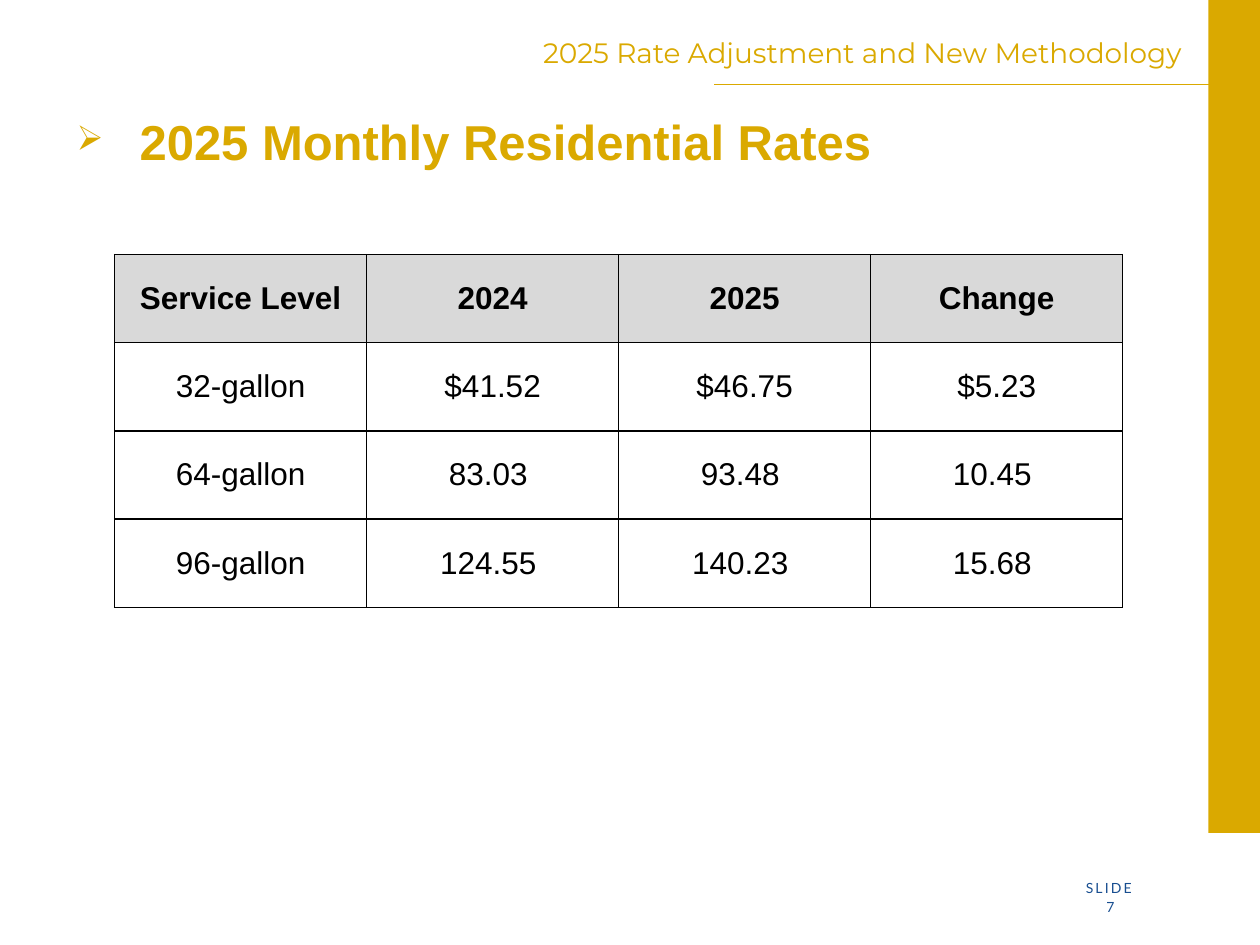
from lxml import etree
from pptx import Presentation
from pptx.dml.color import RGBColor
from pptx.enum.shapes import MSO_CONNECTOR, MSO_SHAPE
from pptx.enum.text import MSO_ANCHOR, PP_ALIGN
from pptx.oxml.ns import qn
from pptx.util import Inches, Pt

LEFT, CENTER, RIGHT = PP_ALIGN.LEFT, PP_ALIGN.CENTER, PP_ALIGN.RIGHT
MIDDLE = MSO_ANCHOR.MIDDLE
STRAIGHT = MSO_CONNECTOR.STRAIGHT
RECTANGLE = MSO_SHAPE.RECTANGLE

COLORS = {"gold": "DAA900", "blue": "184E90", "black": "000000",
          "header": "D9D9D9"}

HEADING_FORMAT = {"name": "Arial", "size": Pt(28), "bold": True}
TITLE_FORMAT = {"name": "Montserrat", "size": Pt(16)}
FOOTER_FORMAT = {"name": "Lato", "size": Pt(8)}
CELL_FORMAT = {"name": "Arial", "size": Pt(18)}

# text, (left, top, width, height), (side inset, top inset), alignment,
# line spacing, colour, format
HEADING = ("2025 Monthly Residential Rates", (0.51, 0.89, 8.8, 0.81),
           (0.1, 0.05), LEFT, 0.9, "gold", HEADING_FORMAT)
TITLE = ("2025 Rate Adjustment and New Methodology", (0.14, 0.26, 9.34, 0.63),
         (0.1, 0.05), RIGHT, 0.9, "gold", TITLE_FORMAT)
FOOTER = [
    ("SLIDE", (8.19, 6.93, 0.89, 0.24), (0.1, 0.05), RIGHT, 1.0, "blue",
     FOOTER_FORMAT),
    ("7", (8.67, 7.07, 0.68, 0.36), (0.11, 0.06), LEFT, 1.0, "blue",
     FOOTER_FORMAT),
]
RATES = [
    ("Service Level", "2024", "2025", "Change"),
    ("32-gallon", "$41.52", "$46.75", "$5.23"),
    ("64-gallon", "83.03", "93.48", "10.45"),
    ("96-gallon", "124.55", "140.23", "15.68"),
]
TABLE_LEFT, TABLE_TOP, COLUMN_WIDTH, ROW_HEIGHT = 0.91, 2.02, 2, 0.7
FIGURE_INSET = 0.07  # shifts figures without a dollar sign to the left


def rgb(color):
    return RGBColor.from_string(COLORS[color])


def set_font(font, color, values):
    for name, value in values.items():
        setattr(font, name, value)
    font.color.rgb = rgb(color)


def add_text(slide, text, box, insets, alignment, spacing, color, values):
    shape = slide.shapes.add_textbox(*map(Inches, box))
    frame = shape.text_frame
    frame.word_wrap = True
    frame.margin_left = frame.margin_right = Inches(insets[0])
    frame.margin_top = frame.margin_bottom = Inches(insets[1])
    paragraph = frame.paragraphs[0]
    paragraph.alignment = alignment
    paragraph.line_spacing = spacing
    run = paragraph.add_run()
    run.text = text
    set_font(run.font, color, values)
    return paragraph


def add_bullet(paragraph):
    properties = paragraph._p.get_or_add_pPr()
    properties.set("marL", str(Inches(0.5)))
    properties.set("indent", str(-Inches(0.5)))
    color = etree.SubElement(properties, qn("a:buClr"))
    etree.SubElement(color, qn("a:srgbClr"), val=COLORS["gold"])
    etree.SubElement(properties, qn("a:buSzPct"), val="70000")
    etree.SubElement(properties, qn("a:buChar"), char="➢")


def add_borders(cell):
    properties = cell._tc.get_or_add_tcPr()
    for position, side in enumerate(("lnL", "lnR", "lnT", "lnB")):
        line = etree.Element(qn("a:" + side), w=str(Pt(1)))
        fill = etree.SubElement(line, qn("a:solidFill"))
        etree.SubElement(fill, qn("a:srgbClr"), val=COLORS["black"])
        properties.insert(position, line)


def fill_cell(cell, text, is_header, is_figure):
    cell.margin_left = cell.margin_right = 0
    cell.margin_top = cell.margin_bottom = 0
    if is_figure and not text.startswith("$"):
        cell.margin_right = Inches(FIGURE_INSET)
    cell.vertical_anchor = MIDDLE
    if is_header:
        cell.fill.solid()
        cell.fill.fore_color.rgb = rgb("header")
    else:
        cell.fill.background()
    add_borders(cell)
    paragraph = cell.text_frame.paragraphs[0]
    paragraph.alignment = CENTER
    run = paragraph.add_run()
    run.text = text
    set_font(run.font, "black", {**CELL_FORMAT, "bold": is_header})


def add_rate_table(slide):
    rows, columns = len(RATES), len(RATES[0])
    box = (TABLE_LEFT, TABLE_TOP, columns * COLUMN_WIDTH, rows * ROW_HEIGHT)
    table = slide.shapes.add_table(rows, columns, *map(Inches, box)).table
    table.horz_banding = False
    for column in table.columns:
        column.width = Inches(COLUMN_WIDTH)
    for row_index, values in enumerate(RATES):
        table.rows[row_index].height = Inches(ROW_HEIGHT)
        for column_index, text in enumerate(values):
            is_header = row_index == 0
            fill_cell(table.cell(row_index, column_index), text, is_header,
                      not is_header and column_index > 0)


def main():
    presentation = Presentation()
    presentation.slide_width = Inches(10)
    presentation.slide_height = Inches(7.5)
    slide = presentation.slides.add_slide(presentation.slide_layouts[6])

    side_bar = slide.shapes.add_shape(
        RECTANGLE, *map(Inches, (9.59, 0, 0.41, 6.61)))
    side_bar.shadow.inherit = False
    side_bar.fill.solid()
    side_bar.fill.fore_color.rgb = rgb("gold")
    side_bar.line.fill.background()

    for footer in FOOTER:
        paragraph = add_text(slide, *footer)
        paragraph.runs[0].font._element.set("spc", "120")

    title_rule = slide.shapes.add_connector(
        STRAIGHT, *map(Inches, (5.67, 0.67, 9.62, 0.67)))
    title_rule.line.color.rgb = rgb("gold")
    title_rule.line.width = Pt(0.5)
    etree.SubElement(title_rule._element.spPr, qn("a:effectLst"))

    add_bullet(add_text(slide, *HEADING))
    add_text(slide, *TITLE)
    add_rate_table(slide)
    presentation.save("out.pptx")


if __name__ == "__main__":
    main()
